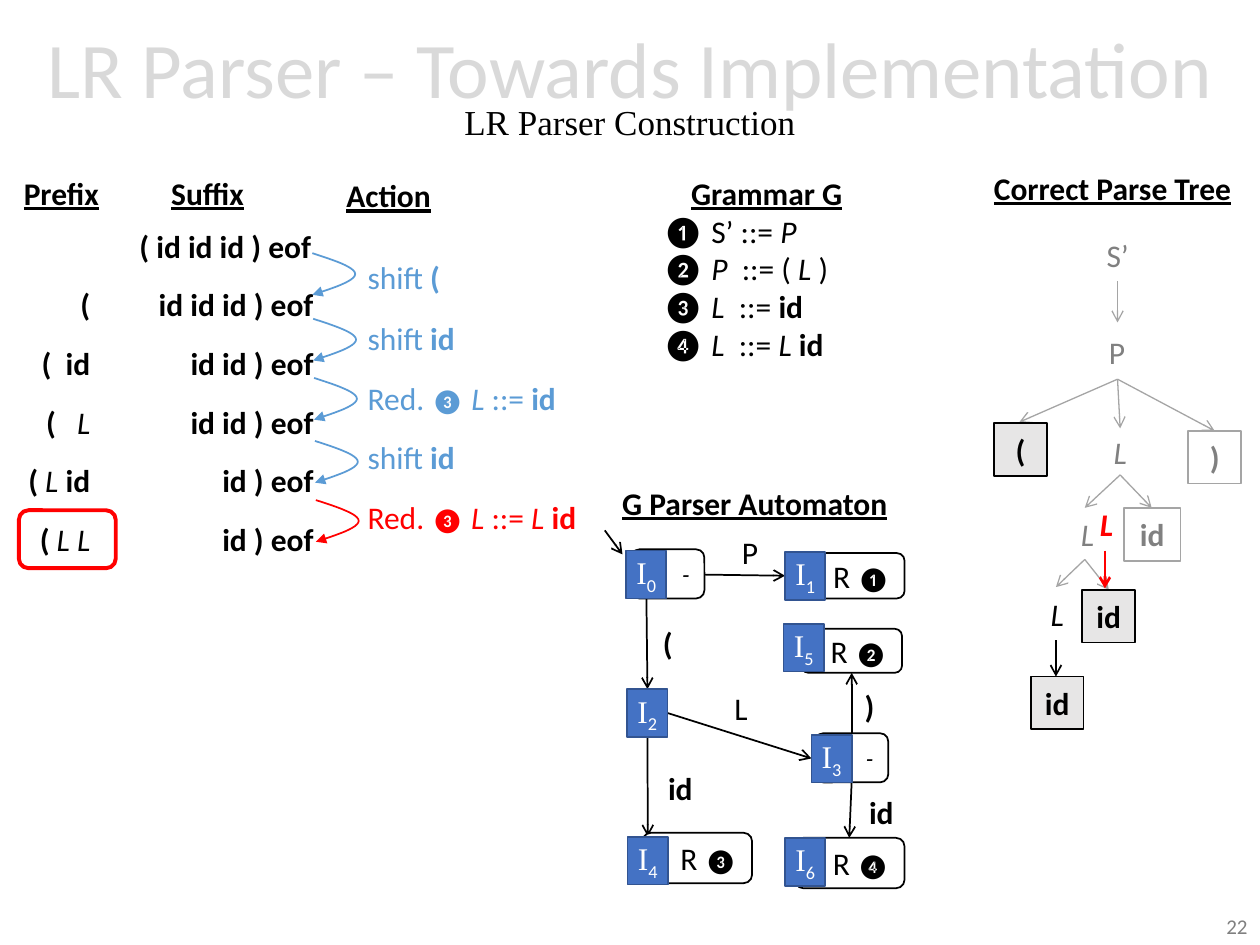
"""Build the slide on LR parser construction: trace, grammar, automaton and parse tree."""
from dataclasses import dataclass
from typing import Any, Optional

import lxml.etree
import pptx
import pptx.dml.color
import pptx.enum.shapes
import pptx.enum.text
import pptx.oxml.ns
import pptx.util

Pt = pptx.util.Pt
Align = pptx.enum.text.PP_ALIGN
Kind = pptx.enum.shapes.MSO_SHAPE
LEFT, MID, RIGHT = Align.LEFT, Align.CENTER, Align.RIGHT
SANS, SERIF = "Calibri", "Times New Roman"
HUES = {
    "black": "000000", "white": "FFFFFF", "pale": "D9D9D9", "grey": "808080",
    "edge": "A5A5A5", "step": "5B9BD5", "red": "FF0000", "leaf": "E7E6E6",
    "state": "4472C4", "rim": "325491",
}


@dataclass
class Box:
    """A text area, bare or with an outline; text holds 'style:words' parts split by bars."""
    text: str
    x: float
    y: float
    w: float
    h: float = 28.8
    hue: str = "black"
    align: Any = MID
    fill: Optional[str] = None
    line: Optional[str] = None
    kind: Any = None
    face: str = SANS
    size: float = 18
    thick: float = 1
    grow: bool = False
    tight: bool = False


@dataclass
class Link:
    """A straight arrow."""
    x: float
    y: float
    u: float
    v: float
    hue: str = "black"
    thick: float = 1


@dataclass
class Step:
    """A parser move: the prefix and suffix after it, and the action that led there."""
    pre: str
    wide: float
    suf: str
    span: float
    act: str = ""
    room: float = 0
    top: float = 0
    bend: float = 0
    hue: str = "step"


def tint(hue: str) -> Any:
    """Return a named colour."""
    return pptx.dml.color.RGBColor.from_string(HUES[hue])


def style(font: Any, marks: set) -> None:
    """Apply style letters to a font."""
    for mark, name in (("b", "bold"), ("i", "italic"), ("u", "underline")):
        if mark in marks:
            setattr(font, name, True)
    if "s" in marks:
        font.size = Pt(14)
    if "d" in marks:
        font.name = SANS


def write(para: Any, text: str, face: str, size: float, hue: str) -> None:
    """Fill a paragraph, with shared styling on the paragraph itself."""
    parts = [part.partition(":")[::2] for part in text.split("|")]
    both = set.intersection(*(set(marks) for marks, _ in parts))
    font = para.font
    font.name, font.size, font.color.rgb = face, Pt(size), tint(hue)
    style(font, both)
    for marks, words in parts:
        run = para.add_run()
        run.text = words
        style(run.font, set(marks) - both)
        props = run._r.get_or_add_rPr()
        for mark, key, value in (("d", "baseline", "-25000"), ("w", "spc", "400"), ("W", "spc", "800")):
            if mark in marks:
                props.set(key, value)


def paint(shape: Any, fill: Optional[str], line: Optional[str], thick: float) -> None:
    """Set the fill and outline of a shape."""
    shape.shadow.inherit = False
    for part, hue in ((shape.fill, fill), (shape.line.fill, line)):
        if hue:
            part.solid()
            part.fore_color.rgb = tint(hue)
        else:
            part.background()
    if line:
        shape.line.width = Pt(thick)


def draw(slide: Any, box: Box) -> Any:
    """Draw a box and return its text frame."""
    place = Pt(box.x), Pt(box.y), Pt(box.w), Pt(box.h)
    if box.kind is None:
        shape = slide.shapes.add_textbox(*place)
    else:
        shape = slide.shapes.add_shape(box.kind, *place)
        paint(shape, box.fill, box.line, box.thick)
    frame = shape.text_frame
    frame.word_wrap = not box.grow
    anchor = pptx.enum.text.MSO_ANCHOR
    frame.vertical_anchor = anchor.TOP if box.grow else anchor.MIDDLE
    if box.grow:
        frame.auto_size = pptx.enum.text.MSO_AUTO_SIZE.SHAPE_TO_FIT_TEXT
    if box.tight:
        frame.margin_left = frame.margin_right = frame.margin_top = frame.margin_bottom = 0
    if box.text:
        frame.paragraphs[0].alignment = box.align
        write(frame.paragraphs[0], box.text, box.face, box.size, box.hue)
    return frame


def point(line: Any, head: str) -> None:
    """Put an arrowhead at the end of a line."""
    tip = lxml.etree.SubElement(line._get_or_add_ln(), pptx.oxml.ns.qn("a:tailEnd"))
    tip.set("type", head)


def join(slide: Any, link: Link) -> None:
    """Draw a straight arrow."""
    wire = slide.shapes.add_connector(
        pptx.enum.shapes.MSO_CONNECTOR.STRAIGHT, Pt(link.x), Pt(link.y), Pt(link.u), Pt(link.v))
    wire.line.color.rgb, wire.line.width = tint(link.hue), Pt(link.thick)
    point(wire.line, "arrow")
    lxml.etree.SubElement(wire._element.spPr, pptx.oxml.ns.qn("a:effectLst"))


def curve(slide: Any, x: float, y: float, hue: str) -> None:
    """Draw the bent arrow that leads from one trace row to the next."""
    wide, tall, count = 24.5, 23.8, 24
    dots = []
    for k in range(1, count + 1):
        t = 2 * k / count - 1
        bulge = 1 - abs(t) ** 3 if abs(t) == 1 else 1 - 1.5 * t * t + 0.5 * abs(t) ** 3
        dots.append((Pt(x + wide * bulge), Pt(y + tall * (t + 1) / 2)))
    path = slide.shapes.build_freeform(Pt(x), Pt(y))
    path.add_line_segments(dots, close=False)
    shape = path.convert_to_shape()
    paint(shape, None, hue, 1)
    point(shape.line, "triangle")


def trace(slide: Any) -> None:
    """Draw the table of prefixes, suffixes and actions."""
    steps = [
        Step("", 0, "b:( id id id ) eof", 113.8),
        Step("b:(", 20, "b:id id id ) eof", 103.7, ":shift |b:(", 56.9, 144, 144.7),
        Step("b:(|bw: |b:id", 42.5, "b:id id ) eof", 85.7, ":shift |b:id", 65.5, 178.6, 182.2),
        Step("b:(|bW: |i:L", 40.3, "b:id id ) eof", 85.7,
             ":Red. |s:❸|: |i:L|: ::= |b:id", 123.8, 213.1, 216),
        Step("b:( |i:L |b:id", 50.4, "b:id ) eof", 67, ":shift |b:id", 64.8, 247, 252),
        Step("b:( |i:L L", 44, "b:id ) eof", 67,
             ":Red. |s:❸|: |i:L|: ::= |i:L |b:id", 139.7, 280.8, 285.8, "red"),
    ]
    for k, step in enumerate(steps):
        y = 126 + 33.55 * k
        end = 186.4 if k else 185
        draw(slide, Box(step.suf, end - step.span, y, step.span, align=RIGHT, grow=True))
        if step.pre:
            draw(slide, Box(step.pre, 58.7 - step.wide, y, step.wide, align=RIGHT, grow=True))
            draw(slide, Box(step.act, 203, step.top, step.room, hue=step.hue, align=LEFT, grow=True))
            curve(slide, 178 + 0.5 * k, step.bend, step.hue)
    draw(slide, Box("", 10.8, 291.6, 55.4, 33.1, line="red", kind=Kind.ROUNDED_RECTANGLE, thick=2.25))


def rules(slide: Any) -> None:
    """Write the grammar."""
    frame = draw(slide, Box("bu:Grammar G", 371.5, 95.8, 133.9, 116.6, align=LEFT, grow=True))
    frame.word_wrap = True
    frame.paragraphs[0]._p.get_or_add_pPr().set("marL", str(Pt(16.3)))
    for text in (":❶ S’ ::= |i:P", ":❷ |i:P|w: |:::= ( |i:L|: )",
                 ":❸ |i:L|w: |:::= |b:id", ":❹ |i:L|w: |:::= |i:L |b:id"):
        write(frame.add_paragraph(), text, SANS, 18, "black")


def graph(slide: Any) -> None:
    """Draw the parser automaton."""
    for ends in ((397.4, 328.3, 448.6, 329), (369.4, 342, 370, 393.8), (370, 421.2, 370.2, 478),
                 (486.7, 419, 486.7, 384.5), (486.7, 446.4, 485.3, 478.8),
                 (381.6, 407.5, 463.7, 433.4), (345.6, 303.1, 355.7, 316.8)):
        join(slide, Link(*ends))
    for text, x, y, w, h in (("i:-", 360.7, 313.9, 41.8, 28.1), (":R |s:❶", 465.8, 316.1, 51.1, 25.9),
                             (":R |s:❷", 457.9, 359.3, 57.6, 25.2), ("i:-", 465.8, 419, 41.8, 28.1),
                             (":R |s:❸", 367.2, 475.9, 62.6, 28.8), (":R |s:❹", 454.3, 478.8, 62.6, 28.8)):
        draw(slide, Box(text, x, y, w, h, align=RIGHT, fill="white", line="black",
                        kind=Kind.ROUNDED_RECTANGLE, size=14 if text == "i:-" else 18))
    spots = ((357.8, 314.6), (448.6, 315.4), (358.4, 393.8), (463.7, 419.8),
             (358.6, 478.1), (447.8, 356.4), (448.6, 478.8))
    for k, (x, y) in enumerate(spots):
        draw(slide, Box(f":I|d:{k}", x, y, 23, 27.4, "white", fill="state", line="rim",
                        kind=Kind.RECTANGLE, face=SERIF, tight=True))
    for text, x, y, w in ((":P", 416.9, 302.4, 20.2), ("b:(", 371.5, 354.2, 20.2), (":L", 412.6, 391.7, 20.2),
                          ("b:)", 486.7, 390.2, 20.2), ("b:id", 374.4, 437, 28.8), ("b:id", 488.9, 451, 29.5)):
        draw(slide, Box(text, x, y, w, 26))


def tree(slide: Any) -> None:
    """Draw the parse tree."""
    for text, x, y, w, h, line in (
            (":P", 609.1, 184.3, 58.3, 33.1, "white"), ("i:L", 629.3, 244.8, 21.6, 26.6, "white"),
            ("b:)", 679, 246.2, 30.2, 30.2, "edge"), (":S’", 623.5, 130.3, 30.2, 30.2, "white"),
            ("i:L", 610.6, 290.2, 19.4, 30.2, "white"), ("b:id", 642.2, 290.2, 32.4, 30.2, "edge")):
        draw(slide, Box(text, x, y, w, h, "grey", fill="white", line=line, kind=Kind.RECTANGLE))
    for ends in ((638.6, 216.7, 582.5, 241.2), (638.6, 216.7, 640.1, 244.8), (638.6, 216.7, 694.1, 246.2),
                 (640.1, 271.4, 619.9, 290.2), (640.1, 271.4, 658.1, 290.2), (619.9, 319.7, 633.6, 337),
                 (638.6, 160.6, 638.6, 184.3), (619.9, 319.7, 603.4, 335.5)):
        join(slide, Link(*ends, "edge", 0.75))
    for text, x, y in (("b:id", 618.5, 337), ("b:id", 589, 386.6), ("b:(", 568.1, 241.9)):
        draw(slide, Box(text, x, y, 30.2, 30.2, fill="leaf", line="black", kind=Kind.RECTANGLE))
    draw(slide, Box("i:L", 593.3, 335.5, 19.4, 30.2, fill="white", kind=Kind.RECTANGLE))
    join(slide, Link(603.4, 365.8, 603.4, 386.6))
    draw(slide, Box("bi:L", 621.4, 284.4, 19.4, 30.2, "red"))
    join(slide, Link(631.4, 314.6, 631.4, 336.2, "red", 1.5))


def main() -> None:
    """Build and save the slide."""
    deck = pptx.Presentation()
    deck.slide_width, deck.slide_height = Pt(720), Pt(540)
    slide = deck.slides.add_slide(deck.slide_layouts[6])
    para = draw(slide, Box("", 0, 0, 720, 106.6)).paragraphs[0]
    para.alignment, para.line_spacing = MID, 0.7
    for text, face, size, hue in (("LR Parser – Towards Implementation", SANS, 45, "pale"),
                                  ("LR Parser Construction", SERIF, 20, "black")):
        if para.runs:
            para.add_line_break()
        run = para.add_run()
        run.text = text
        run.font.name, run.font.size, run.font.color.rgb = face, Pt(size), tint(hue)
    draw(slide, Box(":22", 558, 519.1, 162, 20.2, "grey", RIGHT, size=12))
    for text, x, y, w in (("Prefix", 6.5, 95.8, 58.3), ("Suffix", 90.7, 95.8, 56.9),
                          ("Action", 190.8, 97.2, 63.4), ("Correct Parse Tree", 560.9, 92.9, 151.2),
                          ("G Parser Automaton", 348.5, 272.9, 167.8)):
        draw(slide, Box(f"bu:{text}", x, y, w, align=LEFT, grow=True))
    trace(slide)
    rules(slide)
    graph(slide)
    tree(slide)
    deck.save("out.pptx")


if __name__ == "__main__":
    main()
